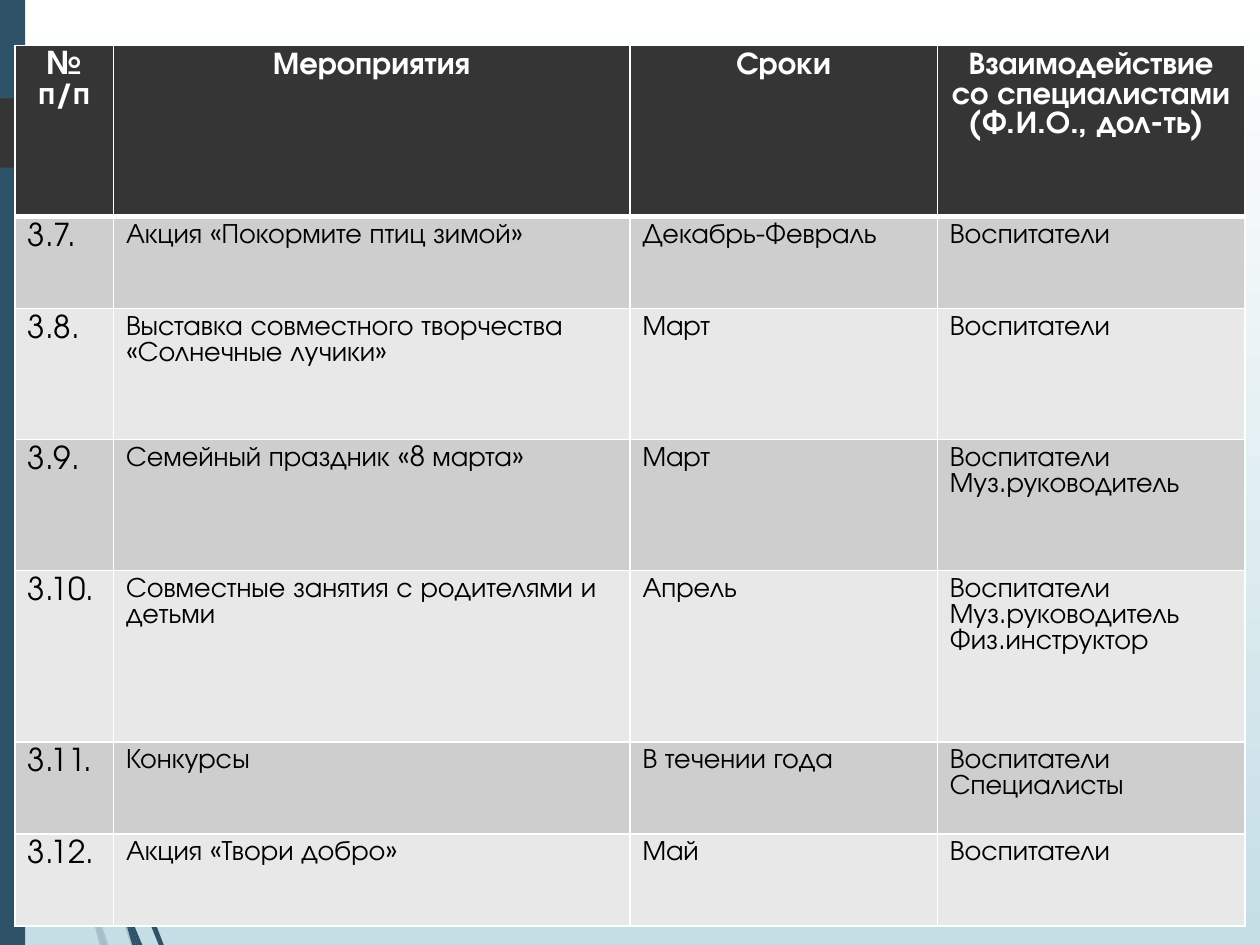
from dataclasses import dataclass

from lxml.etree import SubElement
from pptx import Presentation
from pptx.dml.color import RGBColor
from pptx.enum.shapes import MSO_SHAPE
from pptx.enum.text import PP_ALIGN
from pptx.oxml.ns import qn
from pptx.util import Inches, Pt


@dataclass(frozen=True)
class Theme:
    font: str = "TeX Gyre Adventor"
    head: int = 18
    body: int = 16
    white: str = "FFFFFF"
    black: str = "000000"
    sky: str = "C5DEE5"
    navy: str = "2E5369"
    dark: str = "353535"
    bands: tuple = ("CECECE", "E8E8E8")


THEME = Theme()
COLS = (0.78, 4.1, 2.44, 2.44)
ROWS = (1.36, 0.73, 1.04, 1.04, 1.36, 0.73, 0.73)
HEADS = ("№ п/п", "Мероприятия", "Сроки", "Взаимодействие со специалистами (Ф.И.О., дол-ть) ")
EVENTS = (
    ("3.7.", "Акция «Покормите птиц зимой»", "Декабрь-Февраль", "Воспитатели"),
    ("3.8.", "Выставка совместного творчества «Солнечные лучики»", "Март", "Воспитатели"),
    ("3.9.", "Семейный праздник «8 марта»", "Март", "Воспитатели\nМуз.руководитель"),
    ("3.10.", "Совместные занятия с родителями и детьми", "Апрель",
     "Воспитатели\nМуз.руководитель\nФиз.инструктор"),
    ("3.11.", "Конкурсы", "В течении года", "Воспитатели\nСпециалисты"),
    ("3.12.", "Акция «Твори добро»", "Май", "Воспитатели"),
)
# Outlines of the grass blades, in inches
PALE = (
    ((0.08, 3.5), (0.06, 3.22), (0, 2.82), (0, 2.99), (0.07, 3.44)),
    ((0.4, 5.22), (0.59, 5.99), (0.59, 5.86), (0.43, 5.2), (0.1, 3.45), (0.12, 3.76)),
    ((0.64, 6.07), (0.61, 5.96), (0.61, 6.1), (0.85, 6.94), (1.04, 7.5), (1.08, 7.5), (0.88, 6.92)),
    ((0.83, 7.5), (0.86, 7.5), (0.73, 7.11)),
    ((0.64, 6.83), (0.48, 6.19), (0.22, 4.69), (0.12, 3.76), (0.08, 3.5), (0.19, 4.7),
     (0.45, 6.21), (0.64, 6.93), (0.7, 7.14), (0.69, 7.07)),
    ((0.58, 5.99), (0.6, 6.46), (0.64, 6.83), (0.73, 7.11), (0.63, 6.46), (0.61, 6.1)),
    ((0.61, 5.84), (0.76, 4.62), (1.11, 3.49), (1.59, 2.45), (1.87, 1.98), (2.17, 1.53),
     (1.86, 1.97), (1.58, 2.44), (1.1, 3.48), (0.75, 4.61), (0.59, 5.84), (0.61, 5.96)),
    ((0.7, 7.14), (0.79, 7.5), (0.82, 7.5)),
    ((0.61, 6.1), (0.61, 5.96), (0.59, 5.86), (0.58, 5.99)),
    ((0.67, 6.92), (0.65, 6.83), (0.7, 7.14), (0.82, 7.5), (0.83, 7.5), (0.73, 7.11)),
)
DEEP = (
    ((0.05, 1.1), (0.14, 2.33), (0.27, 3.55), (0.47, 4.81), (0.45, 4.53), (0.3, 3.55),
     (0.15, 2.32), (0.06, 1.09), (0.03, 0), (0.02, 0), (0.03, 0.48)),
    ((0.73, 5.92), (0.88, 6.45), (0.88, 6.31), (0.77, 5.9), (0.5, 4.72), (0.53, 5.05)),
    ((0.94, 6.49), (0.91, 6.41), (0.91, 6.56), (1.09, 7.08), (1.26, 7.5), (1.3, 7.5), (1.13, 7.06)),
    ((0.91, 6.91), (0.81, 6.57), (0.6, 5.56), (0.53, 5.05), (0.47, 4.77), (0.56, 5.57),
     (0.77, 6.59), (0.92, 7.08), (0.97, 7.22)),
    ((0.5, 4.72), (0.44, 3.49), (0.48, 2.45), (0.58, 1.41), (0.51, 1.93), (0.43, 3.49),
     (0.45, 4.49), (0.49, 4.72)),
    ((1.1, 7.5), (1.13, 7.5), (1, 7.19)),
    ((0.47, 4.77), (0.53, 5.05), (0.5, 4.72), (0.45, 4.49), (0.45, 4.53)),
    ((0.91, 6.33), (1.03, 5.52), (1.31, 4.76), (1.69, 4.06), (2.16, 3.44), (1.91, 3.73),
     (1.68, 4.05), (1.29, 4.74), (1.01, 5.51), (0.88, 6.31), (0.91, 6.41)),
    ((0.97, 7.22), (1.05, 7.5), (1.08, 7.5)),
    ((0.88, 6.45), (0.91, 6.91), (1, 7.19), (0.91, 6.56)),
    ((0.88, 6.45), (0.91, 6.56), (0.91, 6.41), (0.88, 6.31)),
    ((0.96, 7.06), (0.91, 6.91), (0.97, 7.22), (1.08, 7.5), (1.1, 7.5), (1, 7.19)),
)
TAB = ((0, 0.78), (1.23, 0.78), (1.5, 1.05), (1.23, 1.33), (0, 1.33))


def rgb(code):
    return RGBColor.from_string(code)


def paint(shape, color, alpha=100):
    shape.shadow.inherit = False
    shape.fill.solid()
    shape.fill.fore_color.rgb = rgb(color)
    shape.line.fill.background()
    if alpha < 100:
        tone = shape.fill._xPr.find(qn("a:solidFill"))[0]
        SubElement(tone, qn("a:alpha"), val=str(alpha * 1000))


def add_poly(slide, points, color, alpha=100):
    start, *rest = [(Inches(x), Inches(y)) for x, y in points]
    pen = slide.shapes.build_freeform(*start)
    pen.add_line_segments(rest)
    paint(pen.convert_to_shape(), color, alpha)


def add_back(slide):
    fill = slide.background.fill
    fill.gradient()
    fill.gradient_angle = 270
    for stop, color in zip(fill.gradient_stops, (THEME.white, THEME.sky)):
        stop.color.rgb = rgb(color)
    for blades, alpha in ((PALE, 20), (DEEP, 100)):
        for points in blades:
            add_poly(slide, points, THEME.navy, alpha)
    bar = slide.shapes.add_shape(MSO_SHAPE.RECTANGLE, 0, 0, Inches(0.2), Inches(7.5))
    paint(bar, THEME.navy)
    add_poly(slide, TAB, THEME.dark)


def put_text(frame, text, size=THEME.body, color=THEME.black, bold=False, align=PP_ALIGN.LEFT):
    frame.word_wrap = True
    frame.text = text
    for para in frame.paragraphs:
        para.alignment = align
        font = para.runs[0].font
        font.name, font.size, font.bold = THEME.font, Pt(size), bold
        font.color.rgb = rgb(color)


def frame_cell(cell, top=1, base=1):
    """Draw the white borders of a cell, with widths in points."""
    props = cell._tc.get_or_add_tcPr()
    for side, width in (("L", 1), ("R", 1), ("T", top), ("B", base)):
        line = SubElement(props, qn(f"a:ln{side}"), w=str(Pt(width)))
        fill = SubElement(line, qn("a:solidFill"))
        SubElement(fill, qn("a:srgbClr"), val=THEME.white)


def fill_cell(cell, color):
    cell.fill.solid()
    cell.fill.fore_color.rgb = rgb(color)


def add_plan(slide):
    table = slide.shapes.add_table(
        len(ROWS), len(COLS), Inches(0.12), Inches(0.36), Inches(sum(COLS)), Inches(sum(ROWS))
    ).table
    for col, width in zip(table.columns, COLS):
        col.width = Inches(width)
    for row, height in zip(table.rows, ROWS):
        row.height = Inches(height)
    for cell, text in zip(table.rows[0].cells, HEADS):
        frame_cell(cell, base=3)
        fill_cell(cell, THEME.dark)
        put_text(cell.text_frame, text, size=THEME.head, color=THEME.white,
                 bold=True, align=PP_ALIGN.CENTER)
    for r, event in enumerate(EVENTS, 1):
        for c, text in enumerate(event):
            cell = table.cell(r, c)
            frame_cell(cell, top=3 if r == 1 else 1)
            fill_cell(cell, THEME.bands[(r - 1) % 2])
            put_text(cell.text_frame, text, size=THEME.body if c else THEME.head)


def main():
    deck = Presentation()
    deck.slide_width, deck.slide_height = Inches(10), Inches(7.5)
    slide = deck.slides.add_slide(deck.slide_layouts[6])
    add_back(slide)
    add_plan(slide)
    deck.save("out.pptx")


if __name__ == "__main__":
    main()
